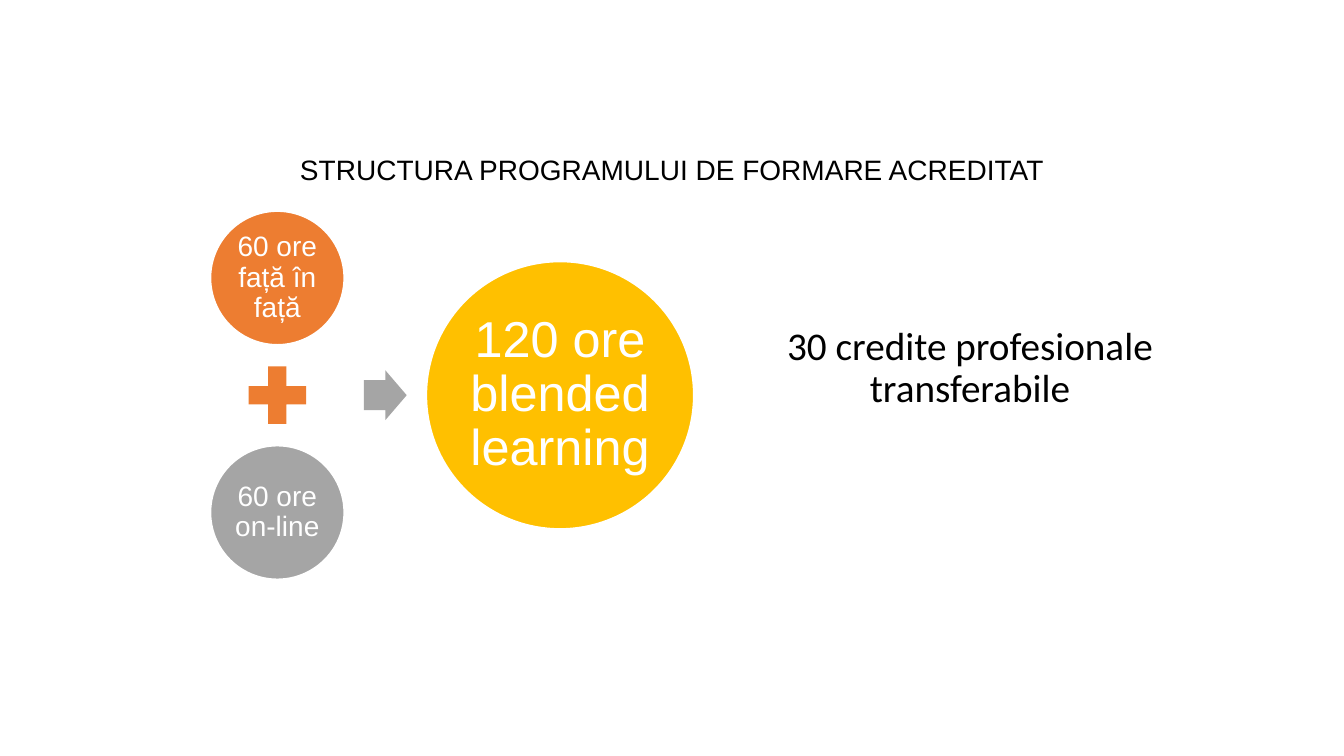
"""Build the slide on the structure of the accredited training programme."""
import pptx
import pptx.dml.color
import pptx.enum.shapes
import pptx.enum.text
import pptx.util

Cm = pptx.util.Cm
Pt = pptx.util.Pt
RGB = pptx.dml.color.RGBColor
SHAPE = pptx.enum.shapes.MSO_SHAPE
ANCHOR = pptx.enum.text.MSO_ANCHOR
CENTER = pptx.enum.text.PP_ALIGN.CENTER

ORANGE = RGB(0xED, 0x7D, 0x31)
GRAY = RGB(0xA5, 0xA5, 0xA5)
GOLD = RGB(0xFF, 0xC0, 0x00)
WHITE = RGB(0xFF, 0xFF, 0xFF)
BLACK = RGB(0x00, 0x00, 0x00)

HEADING = "STRUCTURA PROGRAMULUI DE FORMARE ACREDITAT"
CREDITS = "30 credite profesionale transferabile"
PARTS = [("60 ore față în față", ORANGE), ("60 ore on-line", GRAY)]
TOTAL = ("120 ore blended learning", GOLD)

LEFT, MIDDLE = 5.29, 9.96
PART_SIZE, PLUS_SIZE, TOTAL_SIZE = 3.4, 1.97, 6.77
ARROW_WIDTH, ARROW_HEIGHT = 1.08, 1.26
STACK_GAP, FLOW_GAP = 0.27, 0.48


def write(box, text, font, margins, anchor):
    frame = box.text_frame
    sides = ("margin_left", "margin_top", "margin_right", "margin_bottom")
    layout = dict(zip(sides, map(Cm, margins)), word_wrap=True, vertical_anchor=anchor)
    paragraph = frame.paragraphs[0]
    paragraph.text = text
    paragraph.font.color.rgb = font.pop("color")
    spacing = {"alignment": CENTER, "line_spacing": 0.9}
    for target, values in ((frame, layout), (paragraph, spacing), (paragraph.font, font)):
        for name, value in values.items():
            setattr(target, name, value)


def draw(slide, kind, color, left, width, height, middle=MIDDLE):
    shape = slide.shapes.add_shape(
        kind, Cm(left), Cm(middle - height / 2), Cm(width), Cm(height))
    shape.shadow.inherit = False
    shape.fill.solid()
    shape.fill.fore_color.rgb = color
    shape.line.fill.background()
    return shape


def draw_circle(slide, label, color, left, size, points, margin, middle=MIDDLE):
    circle = draw(slide, SHAPE.OVAL, color, left, size, size, middle)
    circle.line.color.rgb = WHITE
    circle.line.width = Pt(2)
    font = {"name": "Arial", "size": Pt(points), "color": WHITE}
    write(circle, label, font, [margin] * 4, ANCHOR.MIDDLE)


def main():
    deck = pptx.Presentation()
    deck.slide_width, deck.slide_height = Cm(33.87), Cm(19.05)
    slide = deck.slides.add_slide(deck.slide_layouts[6])

    heading = slide.shapes.add_textbox(Cm(2.33), Cm(3.38), Cm(29.21), Cm(1.32))
    write(heading, HEADING, {"name": "Arial", "size": Pt(20), "color": BLACK},
          (0.25, 0.13, 0.25, 0), ANCHOR.BOTTOM)
    credits = slide.shapes.add_textbox(Cm(19.1), Cm(8.1), Cm(10.39), Cm(3.73))
    write(credits, CREDITS, {"name": "Calibri", "size": Pt(28), "color": BLACK},
          (0.55, 0.13, 0.25, 0.13), ANCHOR.TOP)

    offset = (PART_SIZE + PLUS_SIZE) / 2 + STACK_GAP
    for side, (label, color) in zip((-1, 1), PARTS):
        draw_circle(slide, label, color, LEFT, PART_SIZE, 20, 0.07, MIDDLE + side * offset)
    plus_left = LEFT + (PART_SIZE - PLUS_SIZE) / 2
    draw(slide, SHAPE.MATH_PLUS, ORANGE, plus_left, PLUS_SIZE, PLUS_SIZE)

    arrow_left = LEFT + PART_SIZE + FLOW_GAP
    arrow = draw(slide, SHAPE.RIGHT_ARROW, GRAY, arrow_left, ARROW_WIDTH, ARROW_HEIGHT)
    arrow.adjustments[0] = 0.6
    total_left = arrow_left + ARROW_WIDTH + FLOW_GAP
    draw_circle(slide, *TOTAL, total_left, TOTAL_SIZE, 36, 0.13)

    deck.save("out.pptx")


if __name__ == "__main__":
    main()
